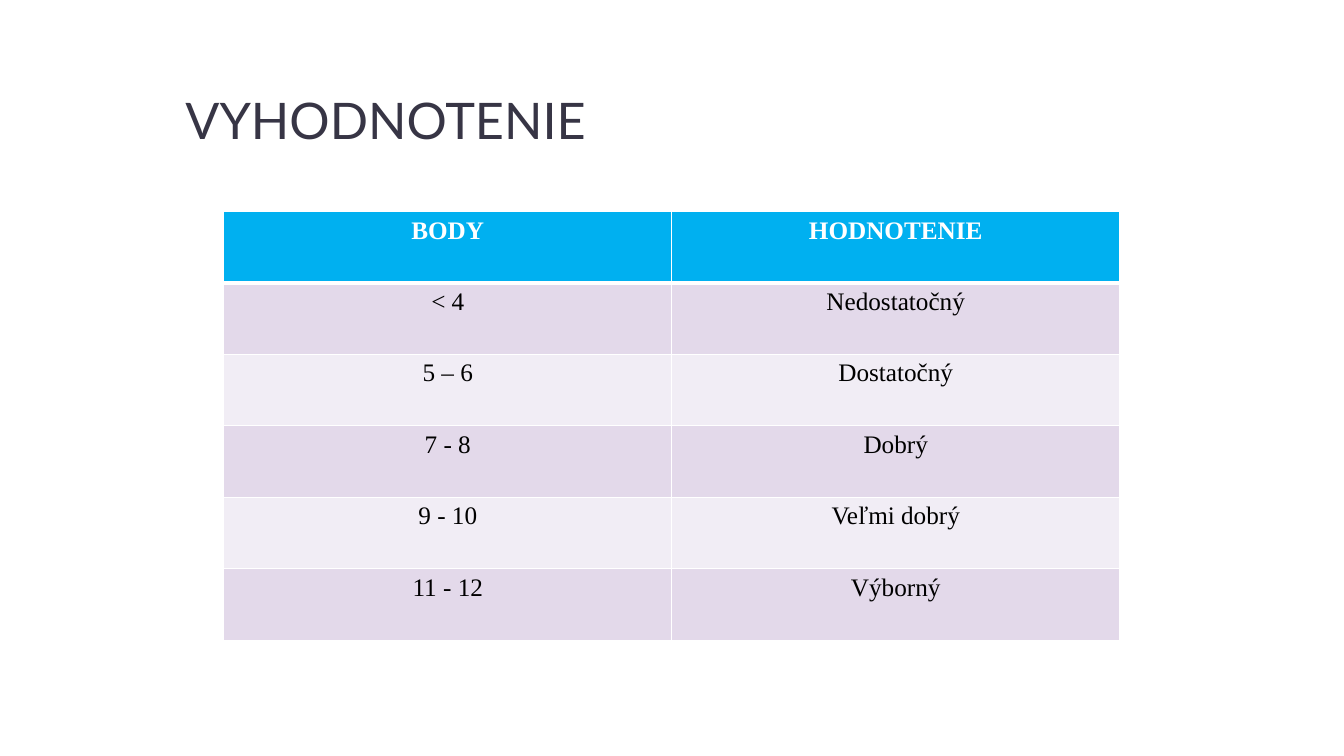
from dataclasses import dataclass

from lxml import etree
from pptx import Presentation
from pptx.dml.color import RGBColor
from pptx.enum import text
from pptx.oxml import ns
from pptx.util import Cm, Pt


@dataclass(frozen=True)
class Theme:
    title_font: str = "Lato"
    table_font: str = "Times New Roman"
    title_size: int = 36
    table_size: int = 18
    title_color: str = "373545"
    white: str = "FFFFFF"
    black: str = "000000"
    header_fill: str = "00B0F0"
    band_fills: tuple = ("E3D9EA", "F1EDF5")
    thin_line: int = 1
    header_line: int = 3


theme = Theme()


def write(frame, words, font, size, color, bold=False, align=text.PP_ALIGN.LEFT, spacing=1.0):
    para = frame.paragraphs[0]
    para.alignment = align
    para.line_spacing = spacing
    span = para.add_run()
    span.text = words
    span.font.name = font
    span.font.size = Pt(size)
    span.font.bold = bold
    span.font.color.rgb = RGBColor.from_string(color)


def add_border(cell, side, width):
    line = etree.SubElement(cell._tc.get_or_add_tcPr(), ns.qn(f"a:ln{side}"), w=str(Pt(width)))
    fill = etree.SubElement(line, ns.qn("a:solidFill"))
    etree.SubElement(fill, ns.qn("a:srgbClr"), val=theme.white)


deck = Presentation()
deck.slide_width, deck.slide_height = Cm(33.87), Cm(19.05)
page = deck.slides.add_slide(deck.slide_layouts[5])

title = page.shapes.title
title.left, title.top, title.width, title.height = Cm(4.42), Cm(0.48), Cm(27.18), Cm(3.45)
title.text_frame.vertical_anchor = text.MSO_ANCHOR.BOTTOM
title.text_frame.word_wrap = True
write(title.text_frame, "VYHODNOTENIE", theme.title_font, theme.title_size,
      theme.title_color, spacing=0.9)

grades = [
    ("BODY", "HODNOTENIE"),
    ("< 4", "Nedostatočný"),
    ("5 – 6", "Dostatočný"),
    ("7 - 8", "Dobrý"),
    ("9 - 10", "Veľmi dobrý"),
    ("11 - 12", "Výborný"),
]
table = page.shapes.add_table(len(grades), 2, Cm(5.64), Cm(5.33), Cm(22.58), Cm(10.8)).table

for row, grade in enumerate(grades):
    header = row == 0
    for column, words in enumerate(grade):
        cell = table.cell(row, column)
        write(cell.text_frame, words, theme.table_font, theme.table_size,
              theme.white if header else theme.black,
              bold=header, align=text.PP_ALIGN.CENTER)
        for side in "LRTB":
            thick = (row, side) in ((0, "B"), (1, "T"))
            add_border(cell, side, theme.header_line if thick else theme.thin_line)
        cell.fill.solid()
        cell.fill.fore_color.rgb = RGBColor.from_string(
            theme.header_fill if header else theme.band_fills[(row - 1) % 2])

deck.save("out.pptx")
